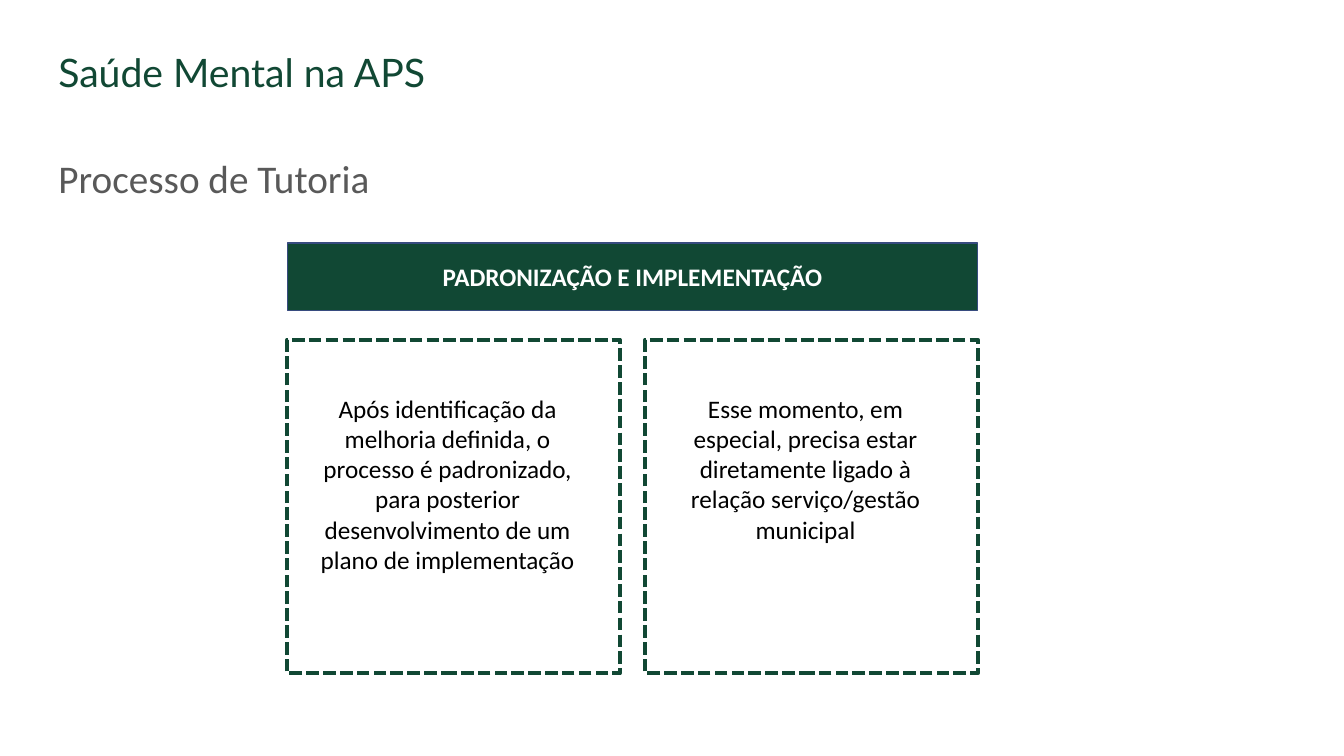
import pptx
import pptx.util
import pptx.dml.color
import pptx.enum.dml
import pptx.enum.shapes
import pptx.enum.text

Cm = pptx.util.Cm
Pt = pptx.util.Pt
ALIGN = pptx.enum.text.PP_ALIGN
MIDDLE = pptx.enum.text.MSO_ANCHOR.MIDDLE
TOP = pptx.enum.text.MSO_ANCHOR.TOP
COLORS = {"green": "114834", "gray": "595959", "edge": "374B7F",
          "white": "FFFFFF", "black": "000000"}
CARDS = [
    "Após identificação da melhoria definida, o processo é padronizado, "
    "para posterior desenvolvimento de um plano de implementação",
    "Esse momento, em especial, precisa estar diretamente ligado à "
    "relação serviço/gestão municipal",
]


def color(name):
    return pptx.dml.color.RGBColor.from_string(COLORS[name])


def write(shape, text, tone, size, align=ALIGN.LEFT, anchor=TOP,
          name="Calibri", bold=False):
    frame = shape.text_frame
    frame.word_wrap = True
    frame.vertical_anchor = anchor
    frame.text = text
    par = frame.paragraphs[0]
    par.alignment = align
    for key, value in {"name": name, "size": Pt(size), "bold": bold}.items():
        setattr(par.font, key, value)
    par.font.color.rgb = color(tone)
    return par


def label(slide, box, text, *args, **style):
    shape = slide.shapes.add_textbox(*map(Cm, box))
    write(shape, text, *args, **style)


def panel(slide, box, edge, width):
    """Add an unfilled rectangle with a coloured outline."""
    kind = pptx.enum.shapes.MSO_SHAPE.RECTANGLE
    shape = slide.shapes.add_shape(kind, *map(Cm, box))
    shape.shadow.inherit = False
    shape.fill.background()
    shape.line.color.rgb = color(edge)
    shape.line.width = Pt(width)
    return shape


def header(slide, box):
    left, top, width, height = box
    label(slide, (left, top, 17.98, 1.45), "Saúde Mental na APS",
          "green", 28, name="Lato")
    title = slide.shapes.title
    place = {"left": left, "top": top + 1.63, "width": width,
             "height": height - 1.63}
    for key, value in place.items():
        setattr(title, key, Cm(value))
    par = write(title, "Processo de Tutoria", "gray", 28, anchor=MIDDLE)
    par.line_spacing = 0.9


def banner(slide, box):
    bar = panel(slide, box, "edge", 1)
    bar.fill.solid()
    bar.fill.fore_color.rgb = color("green")
    write(bar, "PADRONIZAÇÃO E IMPLEMENTAÇÃO", "white", 18,
          ALIGN.CENTER, MIDDLE, bold=True)


def cards(slide, box, gap=0.64):
    left, top, width, height = box
    wide = (width - gap * (len(CARDS) - 1)) / len(CARDS)
    for i, text in enumerate(CARDS):
        x = left + i * (wide + gap)
        card = panel(slide, (x, top, wide, height), "green", 3)
        card.line.dash_style = pptx.enum.dml.MSO_LINE.SQUARE_DOT
        label(slide, (x + 0.46, top + 1.22, wide - 1.22, 4.88), text,
              "black", 18, ALIGN.CENTER)


def main():
    deck = pptx.Presentation()
    deck.slide_width, deck.slide_height = Cm(33.87), Cm(19.05)
    slide = deck.slides.add_slide(deck.slide_layouts.get_by_name("Title Only"))
    header(slide, (1.22, 1.09, 27.91, 5.31))
    banner(slide, (7.24, 6.12, 17.4, 1.7))
    cards(slide, (7.24, 8.56, 17.4, 8.41))
    deck.save("out.pptx")


if __name__ == "__main__":
    main()
